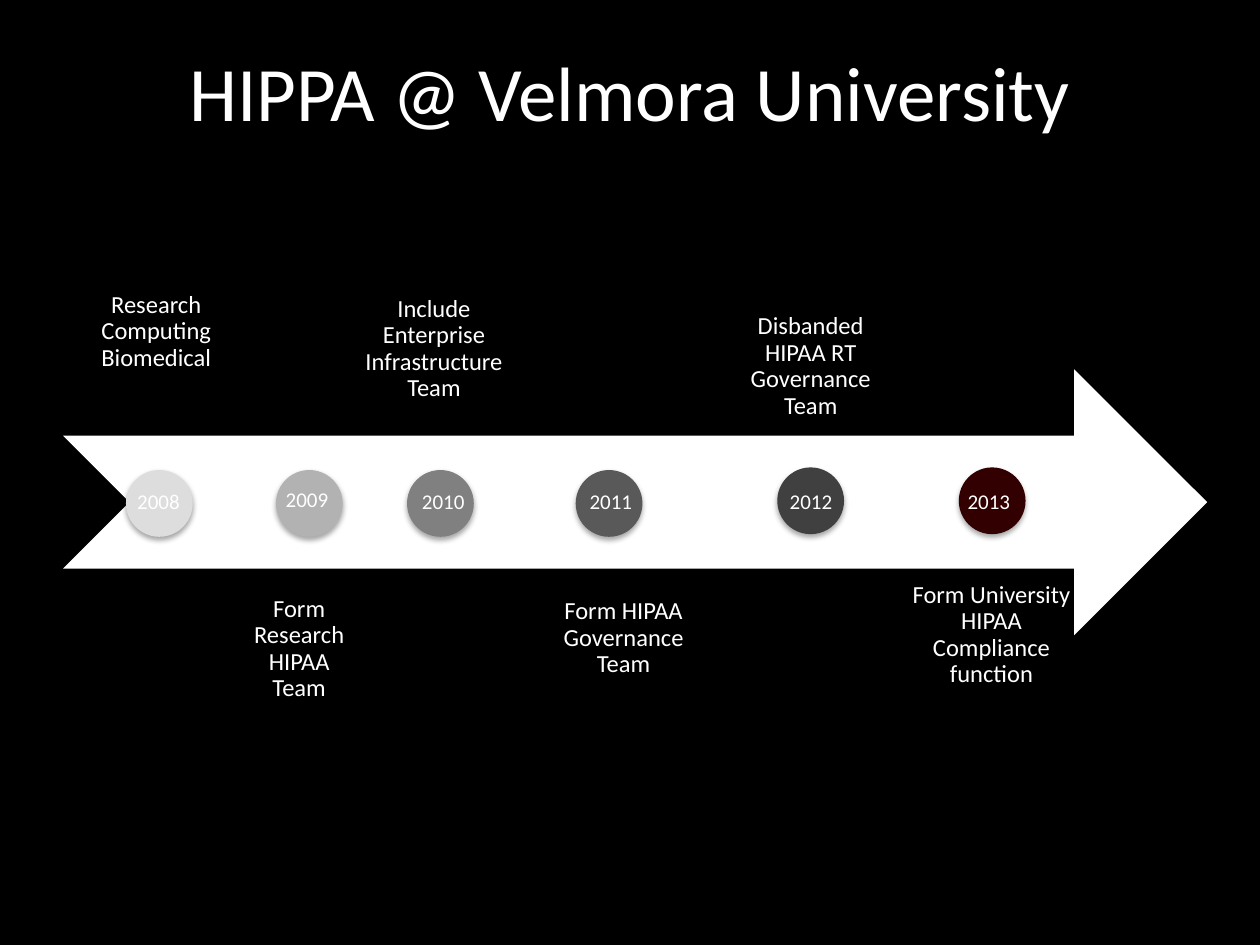
import pptx
import pptx.util
import pptx.dml.color
import pptx.enum.shapes
import pptx.enum.text
import lxml.etree

Pt = pptx.util.Pt
Kind = pptx.enum.shapes.MSO_SHAPE
Align = pptx.enum.text.PP_ALIGN
Anchor = pptx.enum.text.MSO_ANCHOR

# Content: year, event, dot (left, top), year text (left, top), event box, side
TITLE = "HIPPA @ Velmora University"
EVENTS = [
    ("2008", "Research Computing Biomedical", (72, 268.6), (71.3, 275.8),
     (36, 105.8, 106.6, 114.5), "above"),
    ("2009", "Form Research HIPAA Team", (157.7, 268.6), (156.2, 274.3),
     (136.1, 332.6, 69.8, 71.3), "below"),
    ("2010", "Include Enterprise Infrastructure Team", (232.6, 268.6), (234, 275.8),
     (199.4, 121.7, 97.2, 115.9), "above"),
    ("2011", "Form HIPAA Governance Team", (329, 268.6), (329.8, 275.8),
     (306, 334.1, 100.8, 142.6), "below"),
    ("2012", "Disbanded HIPAA RT Governance Team", (444.2, 267.1), (444.2, 275.8),
     (419, 95.8, 88.6, 151.9), "above"),
    ("2013", "Form University HIPAA Compliance function", (547.9, 267.1), (545.8, 275.8),
     (509, 324.7, 115.2, 151.9), "below"),
]
COLORS = {"back": "000000", "ink": "FFFFFF", "2008": "DDDDDD", "2009": "B2B2B2",
          "2010": "808080", "2011": "595959", "2012": "404040", "2013": "320000"}
DOT = 38.16
YEAR = (44.6, 21.6)
ARROW = (36, 211, 653.8, 151.9)
SIDES = {"above": Anchor.BOTTOM, "below": Anchor.TOP}

NS = "http://schemas.openxmlformats.org/drawingml/2006/main"
SHADE = (f'<a:effectLst xmlns:a="{NS}"><a:outerShdw blurRad="39370" dist="22860" '
         'dir="5400000" rotWithShape="0"><a:srgbClr val="000000">'
         '<a:alpha val="35000"/></a:srgbClr></a:outerShdw></a:effectLst>')


def rgb(name):
    return pptx.dml.color.RGBColor.from_string(COLORS[name])


def put(item, form):
    for key, value in form.items():
        setattr(item, key, value)


def draw(kind, box, color):
    shape = slide.shapes.add_shape(kind, *map(Pt, box))
    shape.fill.solid()
    shape.fill.fore_color.rgb = rgb(color)
    shape.line.fill.background()
    props = shape._element.spPr
    props.append(lxml.etree.fromstring(SHADE))


def write(text, box, size, frame=None, para=None):
    area = slide.shapes.add_textbox(*map(Pt, box)).text_frame
    put(area, {"word_wrap": True, **(frame or {})})
    line = area.paragraphs[0]
    put(line, para or {})
    run = line.add_run()
    run.text = text
    put(run.font, {"name": "Calibri", "size": Pt(size)})
    run.font.color.rgb = rgb("ink")


deck = pptx.Presentation()
put(deck, {"slide_width": Pt(720), "slide_height": Pt(540)})
slide = deck.slides.add_slide(deck.slide_layouts[6])
slide.background.fill.solid()
slide.background.fill.fore_color.rgb = rgb("back")

# Title
write(TITLE, (36, 21.6, 648, 90), 44,
      {"vertical_anchor": Anchor.MIDDLE, "margin_bottom": Pt(33)},
      {"alignment": Align.CENTER})

# Timeline arrow
draw(Kind.NOTCHED_RIGHT_ARROW, ARROW, "ink")

# Events: label, dot and year
edges = {f"margin_{side}": Pt(7.9) for side in ("left", "top", "right", "bottom")}
for year, event, dot, spot, box, side in EVENTS:
    write(event, box, 14, {"vertical_anchor": SIDES[side], **edges},
          {"alignment": Align.CENTER, "line_spacing": 0.9})
    draw(Kind.OVAL, (*dot, DOT, DOT), year)
    write(year, (*spot, *YEAR), 12)

deck.save("out.pptx")
